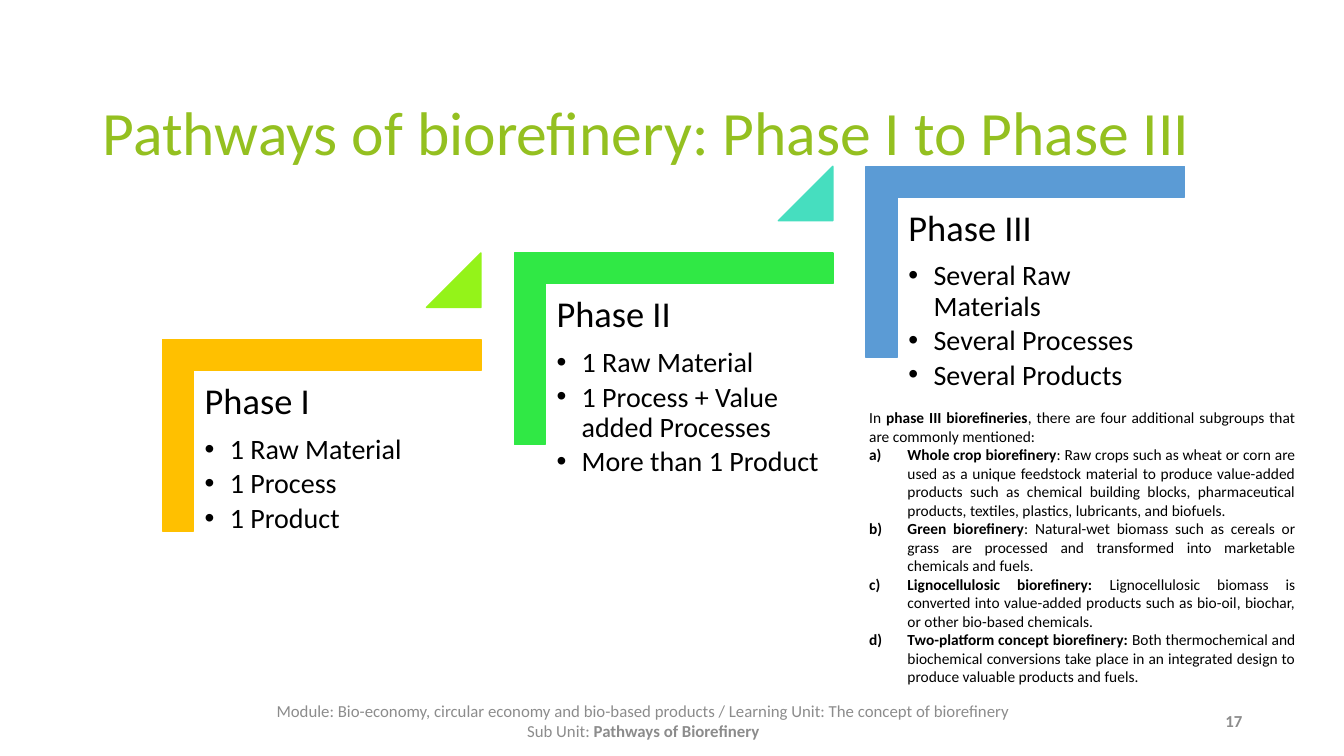
from typing import NamedTuple, Optional

from lxml.etree import SubElement
from pptx import Presentation
from pptx.dml.color import RGBColor
from pptx.enum.shapes import MSO_SHAPE
from pptx.enum.text import MSO_ANCHOR, MSO_AUTO_SIZE, PP_ALIGN
from pptx.oxml.ns import qn
from pptx.util import Inches, Pt

FONT = "Calibri"
BLACK = "000000"
GREY = "8C8C8C"
STEP_RIGHT = 3.49
STEP_UP = 0.86


class Phase(NamedTuple):
    name: str
    items: list[str]
    corner_color: str
    triangle_color: Optional[str]


class Subgroup(NamedTuple):
    name: str
    description: str


PHASES = [
    Phase("Phase I", ["1 Raw Material", "1 Process", "1 Product"], "FFC000", "94F319"),
    Phase("Phase II", ["1 Raw Material", "1 Process + Value added Processes", "More than 1 Product"],
          "30E845", "46DEBF"),
    Phase("Phase III", ["Several Raw Materials", "Several Processes", "Several Products"], "5B9BD5", None),
]

SUBGROUPS = [
    Subgroup("Whole crop bioreﬁnery",
             ": Raw crops such as wheat or corn are used as a unique feedstock material to produce "
             "value-added products such as chemical building blocks, pharmaceutical products, textiles, "
             "plastics, lubricants, and biofuels."),
    Subgroup("Green bioreﬁnery",
             ": Natural-wet biomass such as cereals or grass are processed and transformed into "
             "marketable chemicals and fuels."),
    Subgroup("Lignocellulosic bioreﬁnery:",
             " Lignocellulosic biomass is converted into value-added products such as bio-oil, biochar, "
             "or other bio-based chemicals."),
    Subgroup("Two-platform concept bioreﬁnery: ",
             "Both thermochemical and biochemical conversions take place in an integrated design to "
             "produce valuable products and fuels."),
]


def rgb(color: str) -> RGBColor:
    return RGBColor.from_string(color)


def place(box, left: float, top: float, width: float, height: float) -> None:
    box.left, box.top = Inches(left), Inches(top)
    box.width, box.height = Inches(width), Inches(height)


def prepare(box, anchor: MSO_ANCHOR, inset: Optional[float] = None):
    frame = box.text_frame
    frame.word_wrap = True
    frame.auto_size = MSO_AUTO_SIZE.NONE
    frame.vertical_anchor = anchor
    if inset is not None:
        frame.margin_left = frame.margin_right = Inches(inset)
        frame.margin_top = frame.margin_bottom = Inches(inset)
    return frame


def next_para(frame, align: PP_ALIGN, spacing: float = 1.0, after: float = 0):
    first = frame.paragraphs[0]
    para = frame.add_paragraph() if first.runs else first
    para.alignment = align
    para.line_spacing = spacing
    para.space_before = Pt(0)
    para.space_after = Pt(after)
    return para


def add_span(para, text: str, size: float, color: str, bold: bool = False) -> None:
    span = para.add_run()
    span.text = text
    span.font.name = FONT
    span.font.size = Pt(size)
    span.font.bold = bold
    span.font.color.rgb = rgb(color)


def set_marker(para, tag: str, indent: float = 0, **attributes: str) -> None:
    properties = para._p.get_or_add_pPr()
    properties.set("marL", str(Inches(indent)))
    properties.set("indent", str(-Inches(indent)))
    SubElement(properties, qn(tag), **attributes)


def add_figure(page, kind: MSO_SHAPE, left: float, top: float, width: float, height: float,
               color: str, adjustments: list[float]):
    figure = page.shapes.add_shape(kind, Inches(left), Inches(top), Inches(width), Inches(height))
    for index, value in enumerate(adjustments):
        figure.adjustments[index] = value
    figure.shadow.inherit = False
    figure.fill.solid()
    figure.fill.fore_color.rgb = rgb(color)
    figure.line.color.rgb = rgb(color)
    figure.line.width = Pt(1)
    return figure


def draw_phase(page, box, phase: Phase, number: int) -> None:
    right, up = number * STEP_RIGHT, number * STEP_UP
    corner = add_figure(page, MSO_SHAPE.CORNER, 2.24 + right, 2.74 - up, 1.9, 3.16,
                        phase.corner_color, [0.161, 0.161])
    corner.rotation = 90
    if phase.triangle_color:
        add_figure(page, MSO_SHAPE.ISOSCELES_TRIANGLE, 4.23 + right, 2.51 - up, 0.54, 0.54,
                   phase.triangle_color, [1])
    place(box, 1.92 + right, 3.69 - up, 2.85, 2.5)
    frame = prepare(box, MSO_ANCHOR.TOP, 0.11)
    para = next_para(frame, PP_ALIGN.LEFT, 0.9, 9.1)
    set_marker(para, "a:buNone")
    add_span(para, phase.name, 26, BLACK)
    for item in phase.items:
        para = next_para(frame, PP_ALIGN.LEFT, 0.9, 3)
        para.level = 1
        set_marker(para, "a:buChar", 0.25, char="•")
        add_span(para, item, 20, BLACK)


def draw_subgroups(box) -> None:
    place(box, 8.52, 4, 4.43, 2.88)
    frame = prepare(box, MSO_ANCHOR.TOP)
    para = next_para(frame, PP_ALIGN.JUSTIFY)
    set_marker(para, "a:buNone")
    add_span(para, "In ", 11, BLACK)
    add_span(para, "phase III bioreﬁneries", 11, BLACK, True)
    add_span(para, ", there are four additional subgroups that are commonly mentioned:", 11, BLACK)
    for subgroup in SUBGROUPS:
        para = next_para(frame, PP_ALIGN.JUSTIFY)
        set_marker(para, "a:buAutoNum", 0.38, type="alphaLcParenR")
        add_span(para, subgroup.name, 11, BLACK, True)
        add_span(para, subgroup.description, 11, BLACK)


def draw_footer(page) -> None:
    box = page.shapes.add_textbox(Inches(0.92), Inches(6.82), Inches(10.92), Inches(0.66))
    frame = prepare(box, MSO_ANCHOR.MIDDLE)
    add_span(next_para(frame, PP_ALIGN.CENTER),
             "Module: Bio-economy, circular economy and bio-based products / "
             "Learning Unit: The concept of biorefinery", 12, GREY)
    para = next_para(frame, PP_ALIGN.CENTER)
    add_span(para, "Sub Unit: ", 12, GREY)
    add_span(para, "Pathways of Biorefinery", 12, GREY, True)
    box = page.shapes.add_textbox(Inches(11.92), Inches(6.95), Inches(0.5), Inches(0.4))
    frame = prepare(box, MSO_ANCHOR.MIDDLE)
    add_span(next_para(frame, PP_ALIGN.RIGHT), "17", 12, GREY, True)


def main() -> None:
    deck = Presentation()
    deck.slide_width, deck.slide_height = Inches(13.33), Inches(7.5)
    page = deck.slides.add_slide(deck.slide_layouts.get_by_name("Comparison"))
    title, *phase_boxes, subgroup_box = page.placeholders
    place(title, 0.92, 0.83, 11.5, 1.02)
    para = next_para(prepare(title, MSO_ANCHOR.MIDDLE), PP_ALIGN.LEFT, 0.9)
    add_span(para, "Pathways of biorefinery: Phase I to Phase III", 44, "94C020")
    for number, (box, phase) in enumerate(zip(phase_boxes, PHASES)):
        draw_phase(page, box, phase, number)
    draw_subgroups(subgroup_box)
    draw_footer(page)
    deck.save("out.pptx")


if __name__ == "__main__":
    main()
